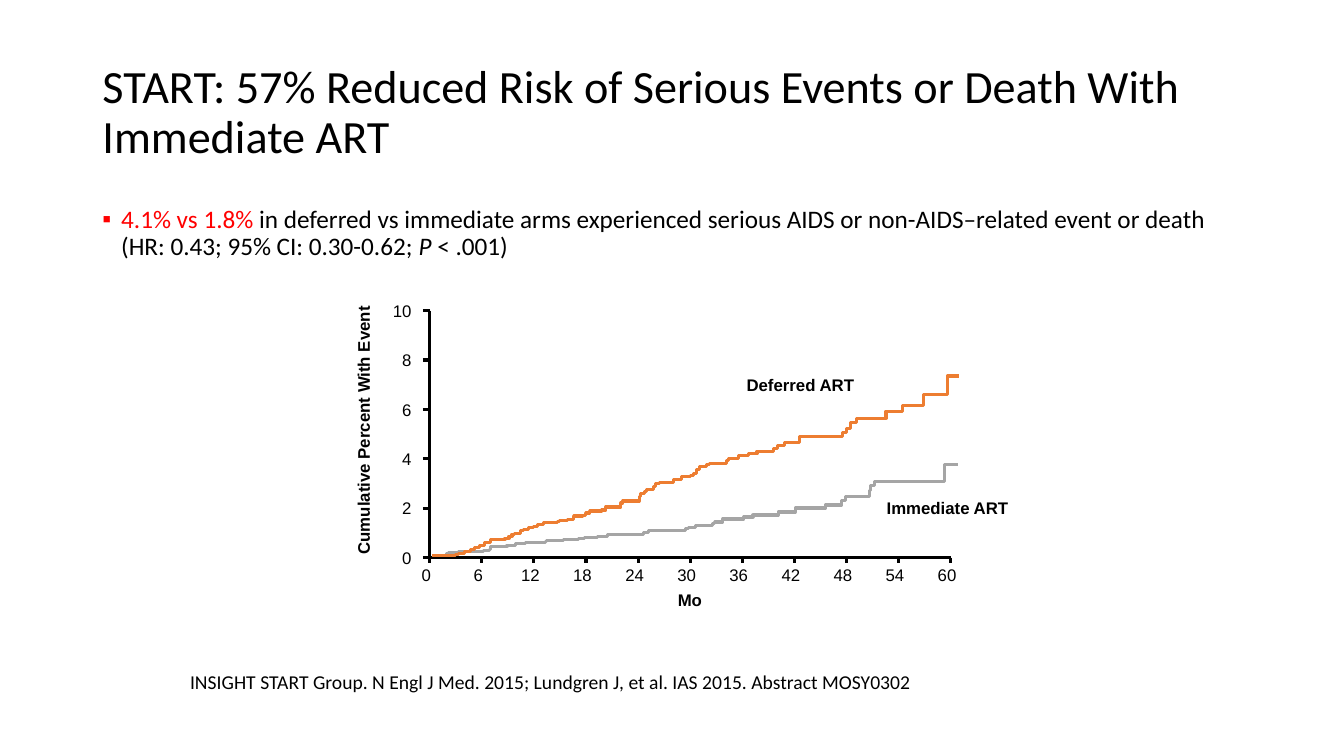
import pptx
import pptx.util
import pptx.dml.color
import pptx.enum.shapes
import pptx.enum.text
import pptx.oxml.ns
import lxml.etree
from dataclasses import dataclass

Pt = pptx.util.Pt
RGB = pptx.dml.color.RGBColor.from_string
ALIGN = pptx.enum.text.PP_ALIGN
ANCHOR = pptx.enum.text.MSO_ANCHOR
AUTO = pptx.enum.text.MSO_AUTO_SIZE
qn = pptx.oxml.ns.qn


@dataclass
class Theme:
    ink: str = "000000"
    accent: str = "FF0000"
    deferred: str = "ED7D31"
    immediate: str = "A5A5A5"
    text_font: str = "Calibri"
    chart_font: str = "Arial"
    title: float = 33
    body: float = 18
    source: float = 14
    label: float = 12
    line: float = 2.25


theme = Theme()
prs = pptx.Presentation()
prs.slide_width, prs.slide_height = Pt(960), Pt(540)
s = prs.slides.add_slide(prs.slide_layouts[5])


def write(sp, runs, size, font=theme.text_font, align=ALIGN.LEFT, wrap=True,
          anchor=ANCHOR.TOP, spacing=1.0):
    """Fill a text shape with (text, format) runs."""
    tf = sp.text_frame
    frame = {"word_wrap": wrap, "auto_size": AUTO.NONE, "vertical_anchor": anchor}
    for name, value in frame.items():
        setattr(tf, name, value)
    p = tf.paragraphs[0]
    p.alignment, p.line_spacing, p.space_before = align, spacing, Pt(0)
    for text, extra in runs:
        r = p.add_run()
        r.text = text
        look = {"name": font, "size": Pt(size), "bold": False, "italic": False}
        look.update(extra)
        color = look.pop("color", theme.ink)
        for name, value in look.items():
            setattr(r.font, name, value)
        r.font.color.rgb = RGB(color)
    return p


def axis_line(x1, y1, x2, y2):
    """Draw one axis or tick line without a shadow."""
    c = s.shapes.add_connector(pptx.enum.shapes.MSO_CONNECTOR.STRAIGHT,
                               Pt(x1), Pt(y1), Pt(x2), Pt(y2))
    c.line.color.rgb, c.line.width = RGB(theme.ink), Pt(theme.line)
    props = c._element.find(qn("p:spPr"))
    lxml.etree.SubElement(props, qn("a:effectLst"))


# Title
sp = s.shapes.title
sp.left, sp.top, sp.width, sp.height = Pt(66), Pt(28.8), Pt(828), Pt(104.4)
write(sp, [("START: 57% Reduced Risk of Serious Events or Death With Immediate ART", {})],
      theme.title, anchor=ANCHOR.MIDDLE, spacing=0.9)

# Key finding, as a bullet
sp = s.shapes.add_textbox(Pt(66), Pt(144), Pt(828), Pt(342.7))
p = write(sp, [
    ("4.1% vs 1.8% ", {"color": theme.accent}),
    ("in deferred vs immediate arms experienced serious AIDS or non-AIDS–related "
     "event or death (HR: 0.43; 95% CI: 0.30-0.62; ", {}),
    ("P", {"italic": True}),
    (" < .001)", {}),
], theme.body, spacing=0.9)
pPr = p._p.get_or_add_pPr()
pPr.set("marL", str(Pt(13.5)))
pPr.set("indent", str(-Pt(13.5)))
lxml.etree.SubElement(pPr, qn("a:buFont")).set("typeface", "Arial")
lxml.etree.SubElement(pPr, qn("a:buChar")).set("char", "▪")

# Axes with ticks and tick labels
x0, y0, x_step, y_step, tick = 307, 398.4, 37.2, 35.3, 5
axis_line(x0, y0 - 5 * y_step, x0, y0)
axis_line(x0, y0, x0 + 10 * x_step, y0)
for i in range(6):
    y = y0 - i * y_step
    axis_line(x0 - tick, y, x0, y)
    sp = s.shapes.add_textbox(Pt(273), Pt(y - 10.8), Pt(28), Pt(21.6))
    write(sp, [(str(2 * i), {})], theme.label, theme.chart_font, ALIGN.RIGHT, False)
for i in range(11):
    x = x0 + i * x_step
    axis_line(x, y0, x, y0 + 3.5)
    sp = s.shapes.add_textbox(Pt(x - 16.5), Pt(399.6), Pt(28), Pt(21.6))
    write(sp, [(str(6 * i), {})], theme.label, theme.chart_font, ALIGN.CENTER, False)

# Axis titles and curve labels: text, left, top, width, rotation
labels = [
    ("Cumulative Percent With Event", 162.7, 296.6, 193.7, 270),
    ("Mo", 476.6, 417.6, 32.4, 0),
    ("Deferred ART", 525.6, 264.2, 92.2, 0),
    ("Immediate ART", 625.7, 352.1, 102.2, 0),
]
for text, left, top, width, turn in labels:
    sp = s.shapes.add_textbox(Pt(left), Pt(top), Pt(width), Pt(21.6))
    sp.rotation = turn
    write(sp, [(text, {"bold": True})], theme.label, theme.chart_font, ALIGN.CENTER, False)

# Step curves on a 0.72 pt grid: each pair is where a step stands and its new level
start, grid = (429, 551), Pt(0.72)
immediate = [
    (443, 549), (445, 548), (455, 547), (480, 546), (486, 545), (487, 542),
    (503, 541), (511, 539), (521, 538), (541, 537), (542, 536), (559, 535),
    (574, 534), (580, 533), (593, 532), (603, 530), (638, 528), (643, 526),
    (680, 524), (683, 523), (690, 521), (707, 519), (709, 518), (717, 515),
    (738, 513), (747, 511), (772, 508), (789, 504), (819, 501), (835, 497),
    (839, 493), (863, 487), (864, 482), (868, 478), (937, 461),
]
deferred = [
    (452, 550), (455, 549), (461, 547), (467, 545), (471, 543), (476, 541),
    (481, 538), (487, 535), (501, 534), (505, 532), (508, 530), (510, 529),
    (516, 526), (519, 525), (524, 523), (529, 522), (533, 520), (539, 518),
    (553, 517), (555, 516), (563, 515), (569, 512), (578, 511), (581, 509),
    (585, 507), (597, 506), (601, 503), (616, 499), (618, 497), (634, 493),
    (635, 490), (639, 488), (641, 486), (648, 483), (650, 480), (654, 479),
    (668, 476), (676, 473), (685, 472), (688, 470), (691, 466), (694, 463),
    (701, 461), (704, 460), (721, 457), (723, 455), (733, 452), (743, 450),
    (751, 448), (767, 445), (771, 442), (778, 439), (793, 433), (836, 429),
    (840, 425), (844, 419), (850, 415), (879, 408), (895, 402), (916, 391),
    (940, 373),
]
for steps, end, color in [(immediate, 950, theme.immediate),
                          (deferred, 951, theme.deferred)]:
    level, points = start[1], []
    for x, new_level in steps:
        points += [(x, level), (x, new_level)]
        level = new_level
    points.append((end, level))
    path_builder = s.shapes.build_freeform(*start, scale=grid)
    path_builder.add_line_segments(points, close=False)
    sp = path_builder.convert_to_shape()
    sp.shadow.inherit = False
    sp.fill.background()
    sp.line.color.rgb, sp.line.width = RGB(color), Pt(theme.line)

# Source line
sp = s.shapes.add_textbox(Pt(33.8), Pt(475.2), Pt(892.8), Pt(24.5))
sp.text_frame.margin_left = Pt(102)
write(sp, [("INSIGHT START Group. N Engl J Med. 2015; Lundgren J, et al. IAS 2015. "
            "Abstract MOSY0302", {})], theme.source)

prs.save("out.pptx")
